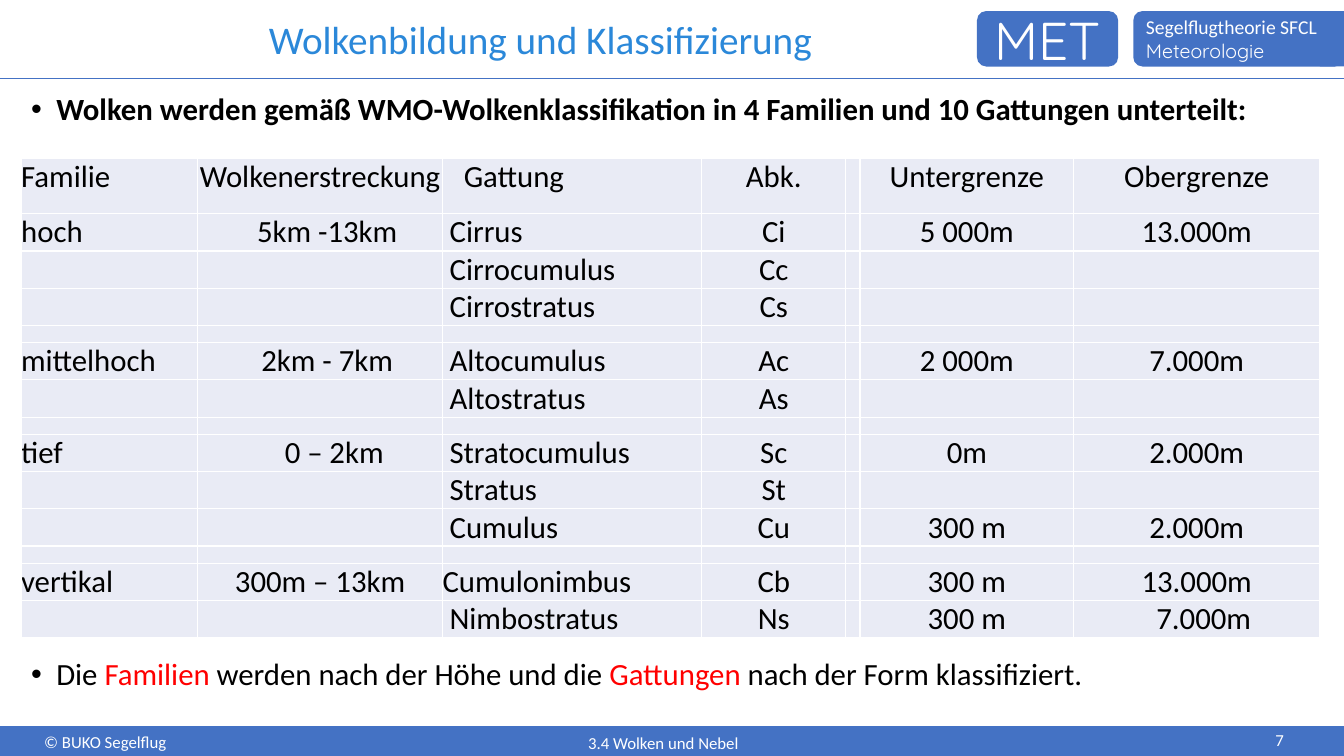
"""Build the slide on cloud families and genera for gliding meteorology."""
from lxml import etree
from pptx import Presentation
from pptx.dml.color import RGBColor
from pptx.enum.shapes import MSO_CONNECTOR, MSO_SHAPE
from pptx.enum.text import MSO_ANCHOR, PP_ALIGN
from pptx.oxml.ns import qn
from pptx.util import Inches, Pt

LEFT, CENTER = PP_ALIGN.LEFT, PP_ALIGN.CENTER
TOP, MIDDLE = MSO_ANCHOR.TOP, MSO_ANCHOR.MIDDLE
RECT, ROUNDED = MSO_SHAPE.RECTANGLE, MSO_SHAPE.ROUNDED_RECTANGLE
STRAIGHT = MSO_CONNECTOR.STRAIGHT
BLUE = RGBColor(0x44, 0x72, 0xC4)
TITLE_BLUE = RGBColor(0x2B, 0x88, 0xD9)
CELL_GREY = RGBColor(0xE9, 0xEB, 0xF5)
WHITE = RGBColor(0xFF, 0xFF, 0xFF)
BLACK = RGBColor(0, 0, 0)
RED = RGBColor(0xFF, 0, 0)


def add_run(paragraph, text, size, color, font="Calibri", bold=False):
    run = paragraph.add_run()
    run.text = text
    run.font.color.rgb = color
    for name, value in {"size": Pt(size), "name": font, "bold": bold}.items():
        setattr(run.font, name, value)


def add_text(box, runs, align=LEFT, anchor=TOP, spacing=1.0, bullet=False):
    frame = slide.shapes.add_textbox(*map(Inches, box)).text_frame
    for name, value in {"word_wrap": True, "vertical_anchor": anchor}.items():
        setattr(frame, name, value)
    paragraph = frame.paragraphs[0]
    for name, value in {"alignment": align, "line_spacing": spacing}.items():
        setattr(paragraph, name, value)
    if bullet:
        properties = paragraph._p.get_or_add_pPr()
        properties.set("marL", str(Inches(0.25)))
        properties.set("indent", str(-Inches(0.25)))
        etree.SubElement(properties, qn("a:buFont"), typeface="Arial")
        etree.SubElement(properties, qn("a:buChar"), char="•")
    for run in runs:
        add_run(paragraph, *run)


prs = Presentation()
prs.slide_width, prs.slide_height = Inches(13.33), Inches(7.5)
slide = prs.slides.add_slide(prs.slide_layouts[6])

blue_areas = [
    (RECT, (0, 7.21, 13.33, 0.31), []),
    (ROUNDED, (9.69, 0.11, 1.4, 0.55), [("MET", 38, WHITE, "Quicksand")]),
    (ROUNDED, (11.24, 0.11, 2.09, 0.55), [
        ("Segelflugtheorie SFCL", 14, WHITE),
        ("Meteorologie", 14, WHITE, "Quicksand"),
    ]),
    (RECT, (13.09, 0.11, 0.24, 0.55), []),
]
for outline, box, lines in blue_areas:
    area = slide.shapes.add_shape(outline, *map(Inches, box))
    area.shadow.inherit = False
    area.fill.solid()
    area.fill.fore_color.rgb = BLUE
    area.line.fill.background()
    frame = area.text_frame
    frame.vertical_anchor = MIDDLE
    for index, line in enumerate(lines):
        paragraph = frame.add_paragraph() if index else frame.paragraphs[0]
        paragraph.alignment = CENTER if len(lines) == 1 else LEFT
        add_run(paragraph, *line)

for rule_y in (0.78, 7.21):
    rule = slide.shapes.add_connector(
        STRAIGHT, Inches(0), Inches(rule_y), Inches(13.33), Inches(rule_y))
    rule.line.color.rgb = BLUE
    rule.line.width = Pt(1.25)
    etree.SubElement(rule._element.spPr, qn("a:effectLst"))

add_text((1.04, 0.14, 8.64, 0.55),
         [("Wolkenbildung und Klassifizierung", 28, TITLE_BLUE)],
         align=CENTER, anchor=MIDDLE, spacing=0.9)
add_text((0.21, 0.88, 12.88, 0.43),
         [("Wolken werden gemäß WMO-Wolkenklassifikation in 4 Familien "
           "und 10 Gattungen unterteilt:", 22, BLACK, "Calibri", True)],
         spacing=0.9, bullet=True)

cloud_rows = [
    ("Familie", "Wolkenerstreckung", "Gattung", "Abk.", "", "Untergrenze", "Obergrenze"),
    ("hoch", "5km -13km", "Cirrus", "Ci", "", "5 000m", "13.000m"),
    ("", "", "Cirrocumulus", "Cc", "", "", ""),
    ("", "", "Cirrostratus", "Cs", "", "", ""),
    ("",) * 7,
    ("mittelhoch", "2km - 7km", "Altocumulus", "Ac", "", "2 000m", "7.000m"),
    ("", "", "Altostratus", "As", "", "", ""),
    ("",) * 7,
    ("tief", "0 – 2km", "Stratocumulus", "Sc", "", "0m", "2.000m"),
    ("", "", "Stratus", "St", "", "", ""),
    ("", "", "Cumulus", "Cu", "", "300 m", "2.000m"),
    ("",) * 7,
    ("vertikal", "300m – 13km", "Cumulonimbus", "Cb", "", "300 m", "13.000m"),
    ("", "", "Nimbostratus", "Ns", "", "300 m", "7.000m"),
]
column_widths = [1.75, 2.43, 2.57, 1.43, 0.14, 2.12, 2.44]
cell_indents = {(0, 2): 0.21, (1, 1): 0.14, (5, 1): 0.14, (8, 1): 0.28,
                (12, 2): 0, (13, 6): 0.14}
clouds = slide.shapes.add_table(
    len(cloud_rows), len(column_widths),
    Inches(0.21), Inches(1.57), Inches(12.88), Inches(4.77)).table
clouds.first_row = clouds.horz_banding = False
for column, width in zip(clouds.columns, column_widths):
    column.width = Inches(width)

for r, entries in enumerate(cloud_rows):
    text_height = 0.37 if any(entries) else 0.17
    clouds.rows[r].height = Inches(text_height if r else 0.55)
    for c, entry in enumerate(entries):
        cell = clouds.cell(r, c)
        indent = cell_indents.get((r, c), 0.07 if c == 2 else 0)
        margins = {"margin_left": Inches(indent), "margin_right": 0,
                   "margin_top": 0, "margin_bottom": 0}
        for name, value in margins.items():
            setattr(cell, name, value)
        for side in ("a:lnL", "a:lnR", "a:lnT", "a:lnB"):
            border = etree.SubElement(cell._tc.get_or_add_tcPr(), qn(side), w=str(Pt(1)))
            border_fill = etree.SubElement(border, qn("a:solidFill"))
            etree.SubElement(border_fill, qn("a:srgbClr"), val=str(WHITE))
        cell.fill.solid()
        cell.fill.fore_color.rgb = CELL_GREY
        paragraph = cell.text_frame.paragraphs[0]
        paragraph.alignment = LEFT if c in (0, 2) else CENTER
        if entry:
            add_run(paragraph, entry, 22, BLACK)
        else:
            etree.SubElement(paragraph._p, qn("a:endParaRPr"), sz="1000")

add_text((0.21, 6.49, 12.88, 0.51), [
    ("Die ", 22, BLACK),
    ("Familien ", 22, RED),
    ("werden nach der Höhe und die ", 22, BLACK),
    ("Gattungen ", 22, RED),
    ("nach der Form klassifiziert.", 22, BLACK),
], spacing=0.9, bullet=True)

add_text((0.34, 7.21, 1.42, 0.31), [("© BUKO Segelflug", 12, WHITE)])
add_text((1.66, 7.24, 9.84, 0.31), [("3.4 Wolken und Nebel", 12, WHITE)],
         align=CENTER, spacing=0.9)
add_text((12.55, 7.19, 0.59, 0.31), [("7", 12, WHITE)])

prs.save("out.pptx")
